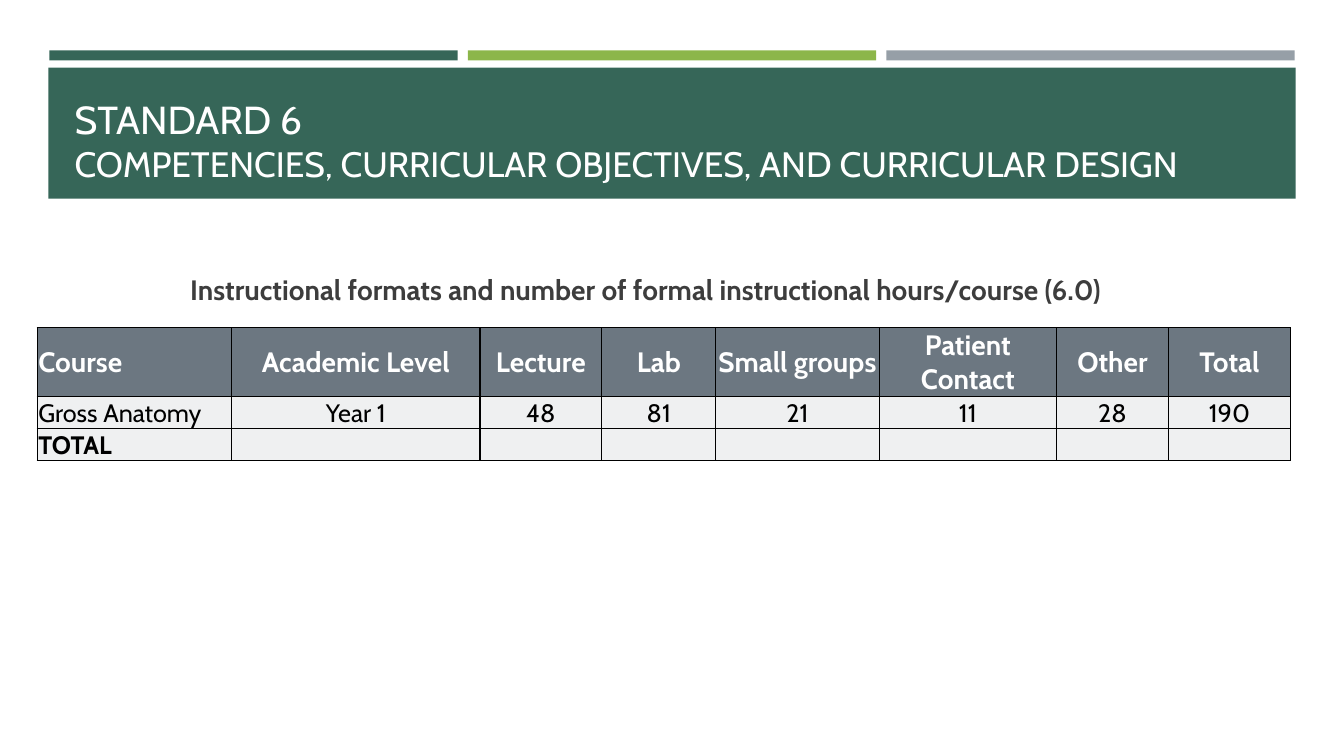
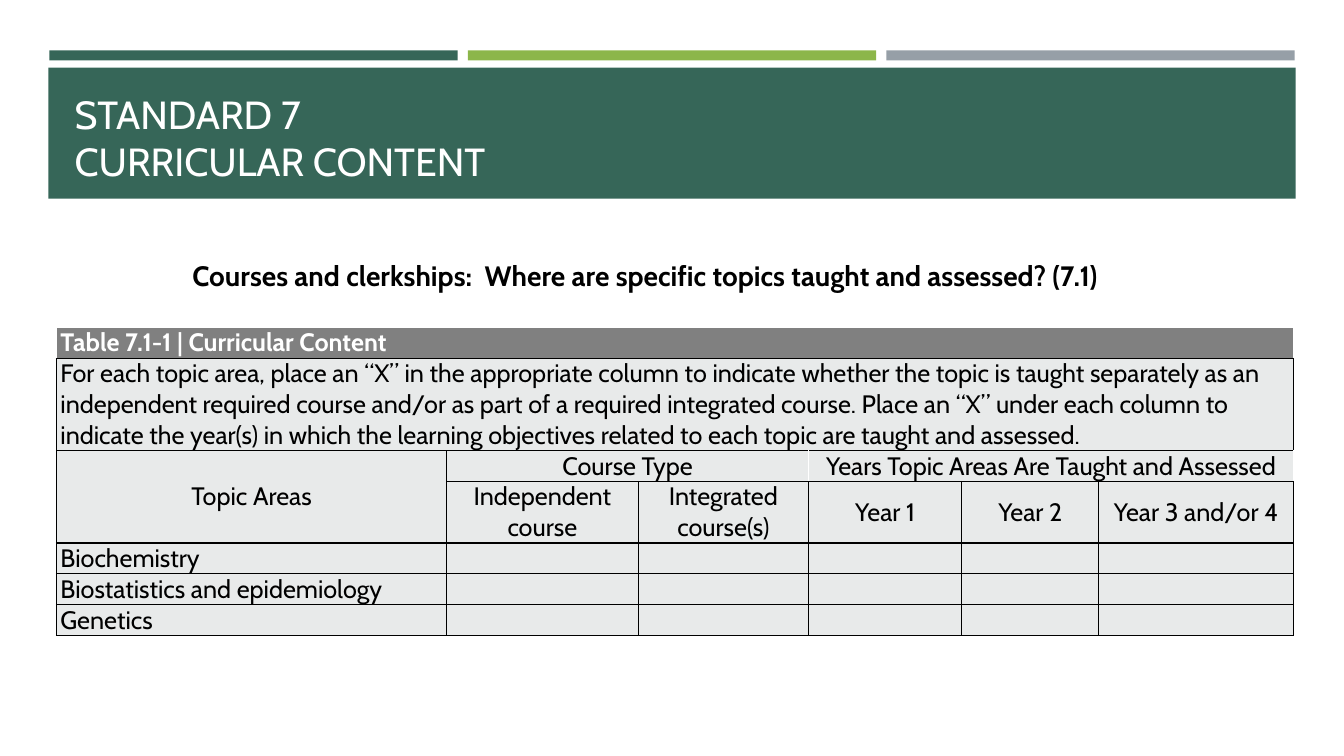
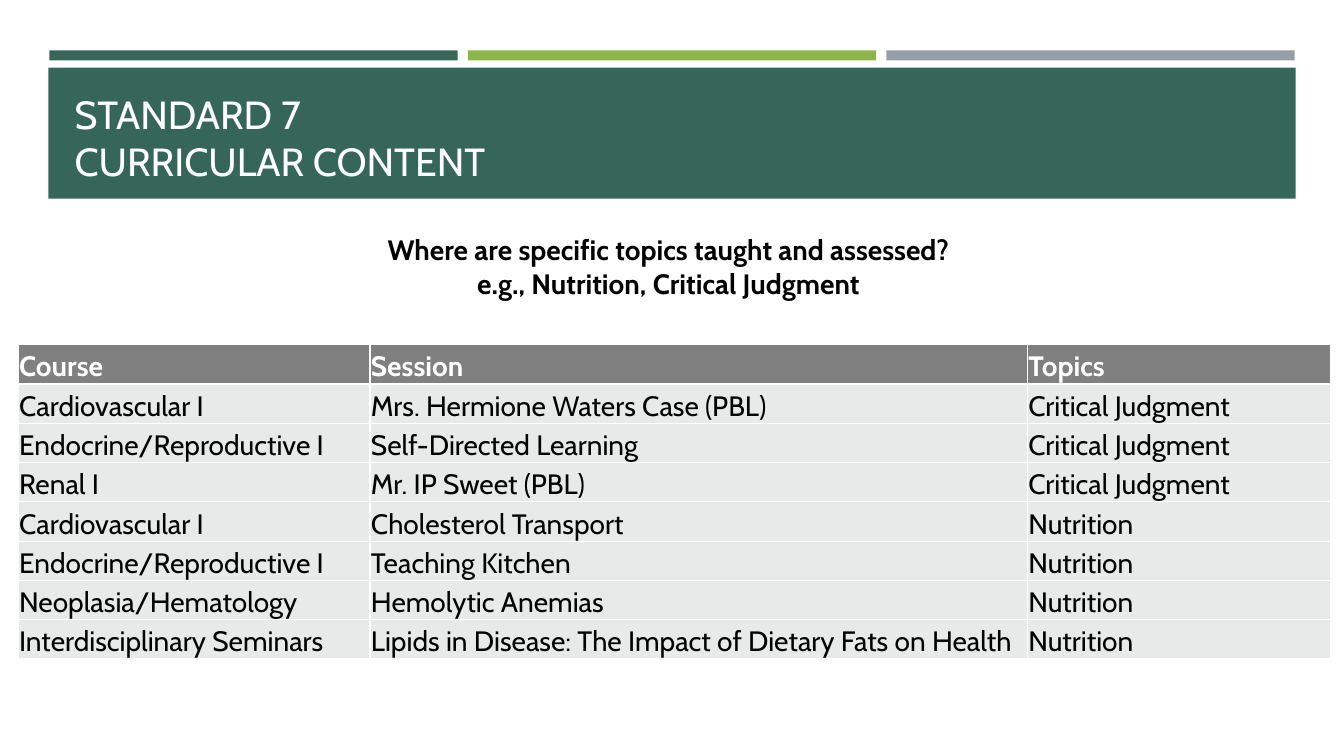
from dataclasses import dataclass
from itertools import product

from lxml.etree import SubElement
from pptx import Presentation
from pptx.dml.color import RGBColor
from pptx.enum.shapes import MSO_SHAPE
from pptx.enum.text import MSO_ANCHOR, MSO_AUTO_SIZE, PP_ALIGN
from pptx.oxml.ns import qn
from pptx.util import Pt

PX = 9144  # 100 px to the inch


@dataclass(frozen=True)
class Theme:
    font: str = "Cabin"
    green: str = "366658"
    lime: str = "8CB64A"
    silver: str = "969FA7"
    slate: str = "6C7781"
    gray: str = "808080"
    pale: str = "EFF0F1"
    mist: str = "E8EAEA"
    charcoal: str = "3D3D3D"
    white: str = "FFFFFF"
    black: str = "000000"
    title_size: float = 28
    long_title_sizes: tuple = (27.9, 25.2)
    large: float = 20
    medium: float = 18


theme = Theme()


def add_text(para, text, size, color, bold=False):
    span = para.add_run()
    span.text = text
    span.font.name = theme.font
    span.font.size = Pt(size)
    span.font.bold = bold
    span.font.color.rgb = RGBColor.from_string(color)


def set_borders(cell, color, white_sides):
    """Draw 1 pt borders, in white on the sides named by letter (L, R, T, B)."""
    properties = cell._tc.get_or_add_tcPr()
    for side in "LRTB":
        line = SubElement(properties, qn(f"a:ln{side}"), w=str(Pt(1)))
        fill = SubElement(line, qn("a:solidFill"))
        SubElement(fill, qn("a:srgbClr"), val=theme.white if side in white_sides else color)


STANDARD_7 = ("STANDARD 7", "CURRICULAR CONTENT")

white_edges = {(0, column): "LTR" for column in range(6)}
white_edges |= {(2, 1): "R", (2, 2): "R", (2, 3): "LR", (2, 4): "LR", (2, 5): "LR"}

pages = [
    dict(
        title=("STANDARD 6", "COMPETENCIES, CURRICULAR OBJECTIVES, AND CURRICULAR DESIGN"),
        title_sizes=theme.long_title_sizes,
        caption=["Instructional formats and number of formal instructional hours/course (6.0)"],
        caption_box=(65, 265, 1151, 44), caption_color=theme.charcoal,
        corner=(37, 325), columns=[193, 246, 121, 113, 162, 176, 111, 121], heights=[68, 31, 31],
        rows=[
            ["Course", "Academic Level", "Lecture", "Lab", "Small groups", "Patient\nContact",
             "Other", "Total"],
            ["Gross Anatomy", "Year 1", "48", "81", "21", "11", "28", "190"],
            ["TOTAL"] + [""] * 7,
        ],
        fills=(theme.slate, theme.pale), sizes=(theme.large, theme.medium),
        anchors=(MSO_ANCHOR.MIDDLE, MSO_ANCHOR.BOTTOM), margins=(1, 1, 1, 0),
        border=theme.black, white_edges={}, merges=[], bold={(2, 0)},
        centered=set(product(range(3), range(1, 8))),
    ),
    dict(
        title=STANDARD_7, title_sizes=(theme.title_size,) * 2,
        caption=["Courses and clerkships:  Where are specific topics taught and assessed? (7.1)"],
        caption_box=(36, 251, 1208, 44), caption_color=theme.black,
        corner=(56, 325), columns=[387, 190, 169, 152, 136, 193],
        heights=[30, 91, 30, 61, 30, 30, 30],
        rows=[
            ["Table 7.1-1 | Curricular Content"] + [""] * 5,
            ["For each topic area, place an “X” in the appropriate column to indicate whether "
             "the topic is taught separately as an independent required course and/or as part "
             "of a required integrated course. Place an “X” under each column to indicate the "
             "year(s) in which the learning objectives related to each topic are taught and "
             "assessed."] + [""] * 5,
            ["Topic Areas", "Course Type", "", "Years Topic Areas Are Taught and Assessed", "", ""],
            ["", "Independent course", "Integrated\ncourse(s)", "Year 1", "Year 2",
             "Year 3 and/or 4"],
            ["Biochemistry"] + [""] * 5,
            ["Biostatistics and epidemiology"] + [""] * 5,
            ["Genetics"] + [""] * 5,
        ],
        fills=(theme.gray, theme.mist), sizes=(theme.medium, theme.medium),
        anchors=(MSO_ANCHOR.TOP, MSO_ANCHOR.MIDDLE), margins=(4, 0, 4, 0),
        border=theme.black, white_edges=white_edges, bold=set(),
        merges=[(0, 0, 0, 5), (1, 0, 1, 5), (2, 0, 3, 0), (2, 1, 2, 2), (2, 3, 2, 5)],
        centered=set(product((2, 3), range(6))),
    ),
    dict(
        title=STANDARD_7, title_sizes=(theme.title_size,) * 2,
        caption=["Where are specific topics taught and assessed?",
                 "e.g., Nutrition, Critical Judgment"],
        caption_box=(48, 226, 1230, 77), caption_color=theme.black,
        corner=(18, 342), columns=[349, 652, 301], heights=[39] * 8,
        rows=[
            ["Course", "Session", "Topics"],
            ["Cardiovascular I", "Mrs. Hermione Waters Case (PBL)", "Critical Judgment"],
            ["Endocrine/Reproductive I", "Self-Directed Learning", "Critical Judgment"],
            ["Renal I", "Mr. IP Sweet (PBL)", "Critical Judgment"],
            ["Cardiovascular I", "Cholesterol Transport", "Nutrition"],
            ["Endocrine/Reproductive I", "Teaching Kitchen", "Nutrition"],
            ["Neoplasia/Hematology", "Hemolytic Anemias", "Nutrition"],
            ["Interdisciplinary Seminars",
             "Lipids in Disease: The Impact of Dietary Fats on Health", "Nutrition"],
        ],
        fills=(theme.gray, theme.mist), sizes=(theme.large, theme.large),
        anchors=(MSO_ANCHOR.BOTTOM, MSO_ANCHOR.BOTTOM), margins=(1, 1, 1, 0),
        border=theme.white, white_edges={}, merges=[], bold=set(), centered=set(),
    ),
]

deck = Presentation()
deck.slide_width, deck.slide_height = 1333 * PX, 750 * PX
layout = deck.slide_layouts[1]
slides = [deck.slides.add_slide(layout) for _ in pages]

# Shared bands and title frame live on the master.
master = deck.slide_master
bands = [(49 + 415 * index, 50, 405, 10, color)
         for index, color in enumerate((theme.green, theme.lime, theme.silver))]
bands.append((48, 67, 1237, 130, theme.green))
for position, (left, top, width, height, color) in enumerate(bands):
    band = slides[0].shapes.add_shape(
        MSO_SHAPE.RECTANGLE, left * PX, top * PX, width * PX, height * PX)
    band.shadow.inherit = False
    band.fill.solid()
    band.fill.fore_color.rgb = RGBColor.from_string(color)
    band.line.fill.background()
    master.shapes.element.insert(2 + position, band.element)

master_title = master.placeholders[0]
master_title.left, master_title.top = 64 * PX, 77 * PX
master_title.width, master_title.height = 1206 * PX, 111 * PX
master_title.text_frame.vertical_anchor = MSO_ANCHOR.BOTTOM
master_title.text_frame.auto_size = MSO_AUTO_SIZE.NONE

for slide, page in zip(slides, pages):
    para = slide.shapes.title.text_frame.paragraphs[0]
    para.alignment = PP_ALIGN.LEFT
    for index, (text, size) in enumerate(zip(page["title"], page["title_sizes"])):
        if index:
            para.add_line_break()
        add_text(para, text, size, theme.white)

    caption = slide.placeholders[1]
    caption.left, caption.top, caption.width, caption.height = (
        length * PX for length in page["caption_box"])
    frame = caption.text_frame
    frame.auto_size = MSO_AUTO_SIZE.NONE
    for index, text in enumerate(page["caption"]):
        para = frame.add_paragraph() if index else frame.paragraphs[0]
        para.alignment = PP_ALIGN.CENTER
        para.space_before = Pt(0)
        properties = para._p.get_or_add_pPr()
        properties.set("marL", "0")
        properties.set("indent", "0")
        SubElement(properties, qn("a:buNone"))
        add_text(para, text, theme.large, page["caption_color"], bold=True)

    left, top = page["corner"]
    table = slide.shapes.add_table(
        len(page["heights"]), len(page["columns"]), left * PX, top * PX,
        sum(page["columns"]) * PX, sum(page["heights"]) * PX).table
    table.first_row = table.horz_banding = False
    for column, width in zip(table.columns, page["columns"]):
        column.width = width * PX
    for row, height in zip(table.rows, page["heights"]):
        row.height = height * PX

    for row_index, texts in enumerate(page["rows"]):
        is_header = row_index == 0
        part = 0 if is_header else 1
        for column_index, text in enumerate(texts):
            place = (row_index, column_index)
            cell = table.cell(*place)
            set_borders(cell, page["border"], page["white_edges"].get(place, ""))
            cell.fill.solid()
            cell.fill.fore_color.rgb = RGBColor.from_string(page["fills"][part])
            cell.vertical_anchor = page["anchors"][part]
            cell.margin_left, cell.margin_top, cell.margin_right, cell.margin_bottom = (
                margin * PX for margin in page["margins"])
            if not text:
                continue
            for index, line in enumerate(text.split("\n")):
                frame = cell.text_frame
                para = frame.add_paragraph() if index else frame.paragraphs[0]
                para.alignment = PP_ALIGN.CENTER if place in page["centered"] else PP_ALIGN.LEFT
                add_text(para, line, page["sizes"][part],
                         theme.white if is_header else theme.black,
                         is_header or place in page["bold"])
    for first_row, first_column, last_row, last_column in page["merges"]:
        table.cell(first_row, first_column).merge(table.cell(last_row, last_column))

deck.save("out.pptx")
